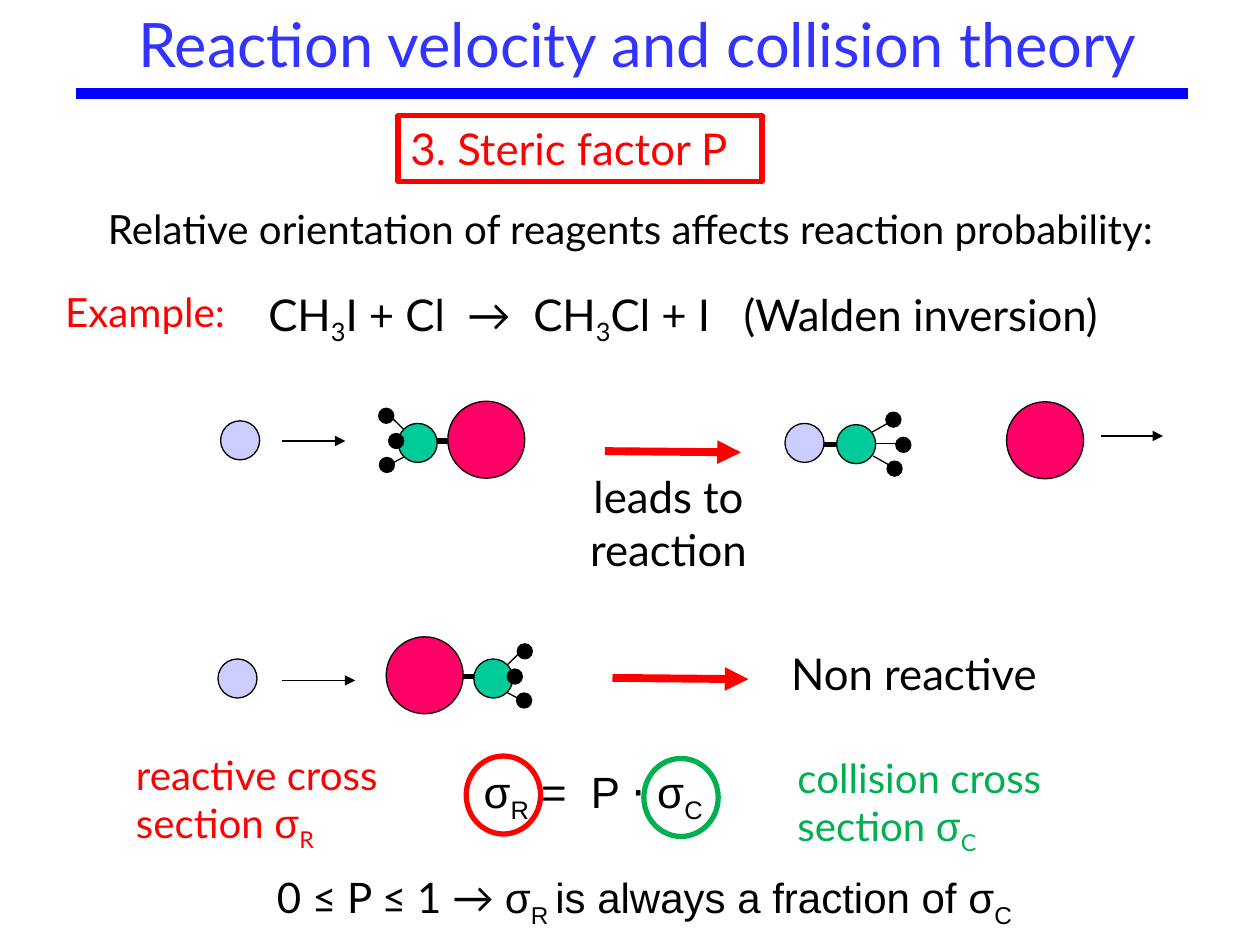
import pptx
import pptx.dml.color
import pptx.enum.shapes
import pptx.enum.text
import pptx.oxml
import pptx.oxml.ns
import pptx.util

Pt = pptx.util.Pt
ALIGN = pptx.enum.text.PP_ALIGN
SHAPE = pptx.enum.shapes.MSO_SHAPE

COLORS = {
    "white": "FFFFFF", "black": "000000", "red": "FF0000", "green": "00B050",
    "title": "3333FF", "rule": "0000FF",
    "carbon": "00CC99", "iodine": "FF0066", "chlorine": "CCCCFF",
}
DIAMETERS = {"carbon": 22.3, "black": 8.6, "iodine": 44, "chlorine": 22.3}


def rgb(name):
    return pptx.dml.color.RGBColor.from_string(COLORS[name])


class SlideBuilder:
    """Holds the text style and the current slide; all lengths are in points."""
    font = "Lato"
    symbol_font = "Arial"

    def __init__(self, slide):
        self.slide = slide

    def fill_paragraph(self, paragraph, pieces, size, color, align=ALIGN.LEFT):
        """Add (font, text) pieces; underscores switch subscript on and off."""
        paragraph.alignment = align
        paragraph.font.size = Pt(size)
        paragraph.font.color.rgb = rgb(color)
        one_font = len({font for font, _ in pieces}) == 1
        if one_font:
            paragraph.font.name = pieces[0][0]
        for font, text in pieces:
            for index, part in enumerate(text.split("_")):
                if not part:
                    continue
                run = paragraph.add_run()
                run.text = part
                if not one_font:
                    run.font.name = font
                if index % 2:
                    run._r.get_or_add_rPr().set("baseline", "-25000")

    def title(self, text, left, top, width, height):
        title = self.slide.shapes.title
        title.left, title.top, title.width, title.height = map(Pt, (left, top, width, height))
        frame = title.text_frame
        frame.auto_size = pptx.enum.text.MSO_AUTO_SIZE.NONE
        frame.vertical_anchor = pptx.enum.text.MSO_ANCHOR.MIDDLE
        self.fill_paragraph(frame.paragraphs[0], [(self.font, text)], 35, "title", ALIGN.CENTER)

    def text(self, lines, left, top, width, height, size=25, color="black", align=ALIGN.LEFT):
        """Each line is a string in the main font or a list of (font, text) pieces."""
        box = self.slide.shapes.add_textbox(Pt(left), Pt(top), Pt(width), Pt(height))
        box.text_frame.word_wrap = True
        for index, line in enumerate(lines):
            paragraph = box.text_frame.add_paragraph() if index else box.text_frame.paragraphs[0]
            pieces = [(self.font, line)] if isinstance(line, str) else line
            self.fill_paragraph(paragraph, pieces, size, color, align)
        return box

    def framed_text(self, line, left, top, width, height, color):
        box = self.text([line], left, top, width, height, color=color)
        box.fill.solid()
        box.fill.fore_color.rgb = rgb("white")
        box.line.color.rgb = rgb(color)
        box.line.width = Pt(3)

    def ellipse(self, left, top, width, height, fill=None, line="black", weight=0.75):
        shape = self.slide.shapes.add_shape(
            SHAPE.OVAL, Pt(left), Pt(top), Pt(width), Pt(height))
        shape.shadow.inherit = False
        if fill:
            shape.fill.solid()
            shape.fill.fore_color.rgb = rgb(fill)
        else:
            shape.fill.background()
        shape.line.color.rgb = rgb(line)
        shape.line.width = Pt(weight)

    def atom(self, kind, x, y):
        diameter = DIAMETERS[kind]
        self.ellipse(x - diameter / 2, y - diameter / 2, diameter, diameter, kind)

    def line(self, x1, y1, x2, y2, color="black", weight=0.75, arrow=False):
        connector = self.slide.shapes.add_connector(
            pptx.enum.shapes.MSO_CONNECTOR.STRAIGHT, Pt(x1), Pt(y1), Pt(x2), Pt(y2))
        connector.line.color.rgb = rgb(color)
        connector.line.width = Pt(weight)
        properties = connector._element.spPr
        namespace = pptx.oxml.ns.nsdecls("a")
        if arrow:
            head = pptx.oxml.parse_xml(f'<a:tailEnd {namespace} type="triangle"/>')
            properties.find(pptx.oxml.ns.qn("a:ln")).append(head)
        properties.append(pptx.oxml.parse_xml(f'<a:effectLst {namespace}/>'))

    def methyl(self, x, y, hydrogens, stems):
        """Draw a carbon at (x, y) with hydrogens and stems given as offsets."""
        self.atom("carbon", x, y)
        for dx, dy in hydrogens:
            self.atom("black", x + dx, y + dy)
        for x1, y1, x2, y2 in stems:
            self.line(x + x1, y + y1, x + x2, y + y2)

    def methyl_iodide(self, x, y, side):
        """Draw the molecule with its iodine on the right (side 1) or left (side -1)."""
        self.line(x + side * 7.5, y - 1.1, x + side * 22.7, y - 1.1, weight=3)
        self.methyl(x, y,
                    [(-18 * side, -15.5), (-17.6 * side, 12.6), (-12.3 * side, -1.1)],
                    [(-8.3 * side, -8, -14.8 * side, -14.4),
                     (-7.6 * side, 7.9, -14.4 * side, 11.5)])
        self.atom("iodine", x + side * 39.2, y - 1.8)

    def chloromethane(self, x, y):
        self.line(x - 21.2, y + 0.4, x - 6, y + 0.4, weight=3)
        self.methyl(x, y,
                    [(21.3, -14), (22, 14), (27, 0.4)],
                    [(9, -6.8, 20.6, -13.3), (11.2, -0.4, 27.8, -0.4), (9.8, 6.8, 21.3, 13.3)])
        self.atom("chlorine", x - 29.5, y - 0.7)


def main():
    presentation = pptx.Presentation()
    presentation.slide_width, presentation.slide_height = Pt(720), Pt(540)
    builder = SlideBuilder(presentation.slides.add_slide(presentation.slide_layouts[5]))
    lato, arial = builder.font, builder.symbol_font

    builder.title("Reaction velocity and collision theory", 62, 0.7, 605, 47.5)
    builder.line(43.2, 53.3, 679, 53.3, "rule", 6)
    builder.framed_text("3. Steric factor P", 227.5, 66.2, 208, 37.4, "red")
    builder.text(["Relative orientation of reagents affects reaction probability:"],
                 15.8, 113, 690, 36.7, 23, align=ALIGN.CENTER)
    builder.text(["Example:"], 30.2, 160.6, 109.4, 35.3, 23, "red")
    builder.text(["CH_3_I + Cl  →  CH_3_Cl + I   (Walden inversion)"],
                 146.2, 160.6, 526.3, 37.4)

    # Chlorine hits the methyl side
    builder.atom("chlorine", 137.2, 251.6)
    builder.line(161.3, 252, 197.3, 252, arrow=True)
    builder.methyl_iodide(238.7, 253.1, 1)
    builder.line(345.6, 257.8, 423.4, 258.5, "red", 4.5, arrow=True)
    builder.text(["leads to reaction"], 317.5, 265, 128.9, 67.7, align=ALIGN.CENTER)
    builder.chloromethane(489.2, 253.8)
    builder.atom("iodine", 597.2, 251.6)
    builder.line(629.3, 249.1, 664.6, 249.1, arrow=True)

    # Chlorine hits the iodine side
    builder.atom("chlorine", 135.7, 387.7)
    builder.line(161.3, 388.8, 203, 388.8, arrow=True)
    builder.methyl_iodide(281.9, 387.7, -1)
    builder.line(350, 387.4, 427.7, 388.1, "red", 4.5, arrow=True)
    builder.text(["Non reactive"], 445, 365.8, 154.8, 37.4)

    # Cross sections
    builder.text([[(arial, "σ_R_ =  P ⋅ σ_C")]], 269.3, 433.4, 176.4, 45.4)
    for name, symbol, color, label_left, ring_left, top in (
            ("reactive", "R", "red", 70.6, 266.4, 432),
            ("collision", "C", "green", 448.6, 367.9, 433.4)):
        section = [(lato, "section "), (arial, "σ"), (lato, f"_{symbol}")]
        builder.text([f"{name} cross", section], label_left, top - 6.8, 157, 68.4, 23, color)
        builder.ellipse(ring_left, top, 42.5, 44.6, line=color, weight=3)
    builder.text([[(lato, "0 ≤ P ≤ 1 → "), (arial, "σ_R _is always a fraction of σ_C")]],
                 110.2, 494.6, 516.2, 36.7, 24, align=ALIGN.CENTER)

    presentation.save("out.pptx")


if __name__ == "__main__":
    main()
